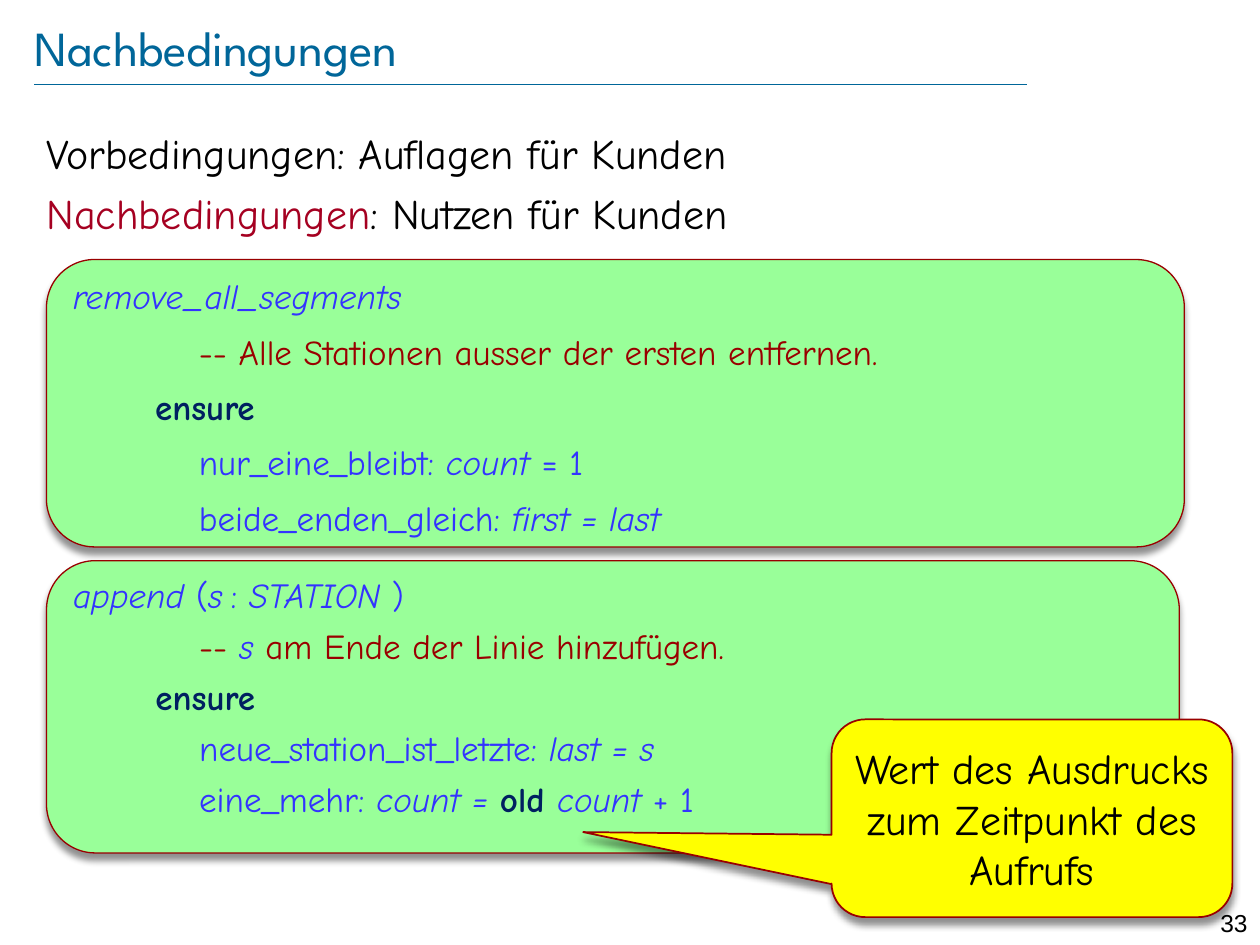
from lxml import etree
from pptx import Presentation
from pptx.dml.color import RGBColor
from pptx.enum.shapes import MSO_CONNECTOR, MSO_SHAPE
from pptx.enum.text import MSO_ANCHOR, PP_ALIGN
from pptx.oxml.ns import qn
from pptx.util import Pt

TEAL = RGBColor(0x00, 0x66, 0x99)
BLACK = RGBColor(0x00, 0x00, 0x00)
CRIMSON = RGBColor(0xA5, 0x00, 0x21)
GREEN = RGBColor(0x99, 0xFF, 0x99)
YELLOW = RGBColor(0xFF, 0xFF, 0x00)
DARK_RED = RGBColor(0x99, 0x00, 0x00)
BLUE = RGBColor(0x33, 0x33, 0xFF)
NAVY = RGBColor(0x00, 0x20, 0x60)
HAND = "Comic Neue"

prs = Presentation()
prs.slide_width, prs.slide_height = Pt(720), Pt(540)
s = prs.slides.add_slide(prs.slide_layouts[6])


def add_run(p, text, size, color, font=HAND, italic=False, bold=False):
    r = p.add_run()
    r.text = text
    r.font.size, r.font.name = Pt(size), font
    r.font.color.rgb = color
    r.font.italic, r.font.bold = italic, bold


def add_box(kind, left, top, width, height, fill, line_width):
    sp = s.shapes.add_shape(kind, Pt(left), Pt(top), Pt(width), Pt(height))
    sp.fill.solid()
    sp.fill.fore_color.rgb = fill
    sp.line.color.rgb = DARK_RED
    sp.line.width = Pt(line_width)
    sp.shadow.inherit = False
    effects = sp._element.spPr.find(qn("a:effectLst"))
    shadow = etree.SubElement(effects, qn("a:outerShdw"), blurRad=str(Pt(4)),
                              dist=str(Pt(4)), dir="5400000", rotWithShape="0")
    color = etree.SubElement(shadow, qn("a:srgbClr"), val="000000")
    etree.SubElement(color, qn("a:alpha"), val="43000")
    sp.text_frame.word_wrap = True
    return sp


# Rule under the title
rule = s.shapes.add_connector(MSO_CONNECTOR.STRAIGHT, Pt(19.5), Pt(48.2), Pt(587), Pt(48.2))
rule.line.color.rgb = TEAL
rule.line.width = Pt(0.25)
etree.SubElement(rule._element.spPr, qn("a:effectLst"))

# Slide number
tf = s.shapes.add_textbox(Pt(680.4), Pt(515.5), Pt(39.6), Pt(17.3)).text_frame
tf.word_wrap = True
tf.paragraphs[0].alignment = PP_ALIGN.RIGHT
add_run(tf.paragraphs[0], "33", 14, BLACK, "Arial")

# Title
tf = s.shapes.add_textbox(Pt(19.5), Pt(9.4), Pt(625.7), Pt(34.6)).text_frame
tf.margin_left = tf.margin_right = tf.margin_top = tf.margin_bottom = 0
tf.word_wrap = True
tf.vertical_anchor = MSO_ANCHOR.MIDDLE
add_run(tf.paragraphs[0], "Nachbedingungen", 28, TEAL, "League Spartan")

# Introduction
tf = s.shapes.add_textbox(Pt(19.5), Pt(69.1), Pt(676.8), Pt(74.9)).text_frame
tf.word_wrap = True
add_run(tf.paragraphs[0], "Vorbedingungen: Auflagen für Kunden", 24, BLACK)
p = tf.add_paragraph()
p.space_before = Pt(5.5)
add_run(p, "Nachbedingungen", 24, CRIMSON)
add_run(p, ": Nutzen für Kunden", 24, BLACK)

# Code boxes: each line is an indent and its runs (text, style)
KEYWORD_INDENT, BODY_INDENT = 47, 72
STYLES = {
    "plain": (20, BLUE, HAND),
    "small": (14, BLUE, HAND),
    "name": (20, BLUE, HAND, True),
    "comment": (20, DARK_RED, HAND),
    "keyword": (20, NAVY, HAND, False, True),
}
remove_lines = [
    (0, [("remove_all_segments", "name")]),
    (BODY_INDENT, [("-- Alle Stationen ausser der ersten entfernen.", "comment")]),
    (KEYWORD_INDENT, [("ensure", "keyword")]),
    (BODY_INDENT, [("nur_eine_bleibt: ", "plain"), ("count ", "name"), ("= 1", "plain")]),
    (BODY_INDENT, [("beide_enden_gleich: ", "plain"), ("first = last", "name")]),
]
append_lines = [
    (0, [("append ", "name"), ("(", "plain"), ("s", "name"), (" ", "small"),
         (":", "plain"), (" STATION ", "name"), (")", "plain")]),
    (BODY_INDENT, [("-- ", "comment"), ("s", "name"),
                   (" am Ende der Linie hinzufügen.", "comment")]),
    (KEYWORD_INDENT, [("ensure", "keyword")]),
    (BODY_INDENT, [("neue_station_ist_letzte:", "plain"), (" last = s", "name")]),
    (BODY_INDENT, [("eine_mehr: ", "plain"), ("count = ", "name"), ("old ", "keyword"),
                   ("count ", "name"), ("+ 1", "plain")]),
]
for top, width, height, spacing, lines in [
    (148.3, 650.2, 164.2, 0.9, remove_lines),
    (320.4, 647.3, 167, 0.8, append_lines),
]:
    sp = add_box(MSO_SHAPE.ROUNDED_RECTANGLE, 26.6, top, width, height, GREEN, 0.75)
    tf = sp.text_frame
    tf.vertical_anchor = MSO_ANCHOR.TOP
    for i, (indent, runs) in enumerate(lines):
        p = tf.add_paragraph() if i else tf.paragraphs[0]
        p.alignment = PP_ALIGN.LEFT
        p.line_spacing = spacing
        if i:
            p.space_before = Pt(10)
        p._p.get_or_add_pPr().set("marL", str(Pt(indent)))
        for text, style in runs:
            add_run(p, text, *STYLES[style])

# Callout on the old expression
sp = add_box(MSO_SHAPE.ROUNDED_RECTANGULAR_CALLOUT, 475.2, 411.1, 229, 113, YELLOW, 1)
for i, value in enumerate((-1.12, 0.07, 0.17)):
    sp.adjustments[i] = value
tf = sp.text_frame
tf.margin_left = tf.margin_right = 0
tf.vertical_anchor = MSO_ANCHOR.MIDDLE
p = tf.paragraphs[0]
p.alignment = PP_ALIGN.CENTER
add_run(p, "Wert des Ausdrucks zum Zeitpunkt des Aufrufs", 24, BLACK)

prs.save("out.pptx")
